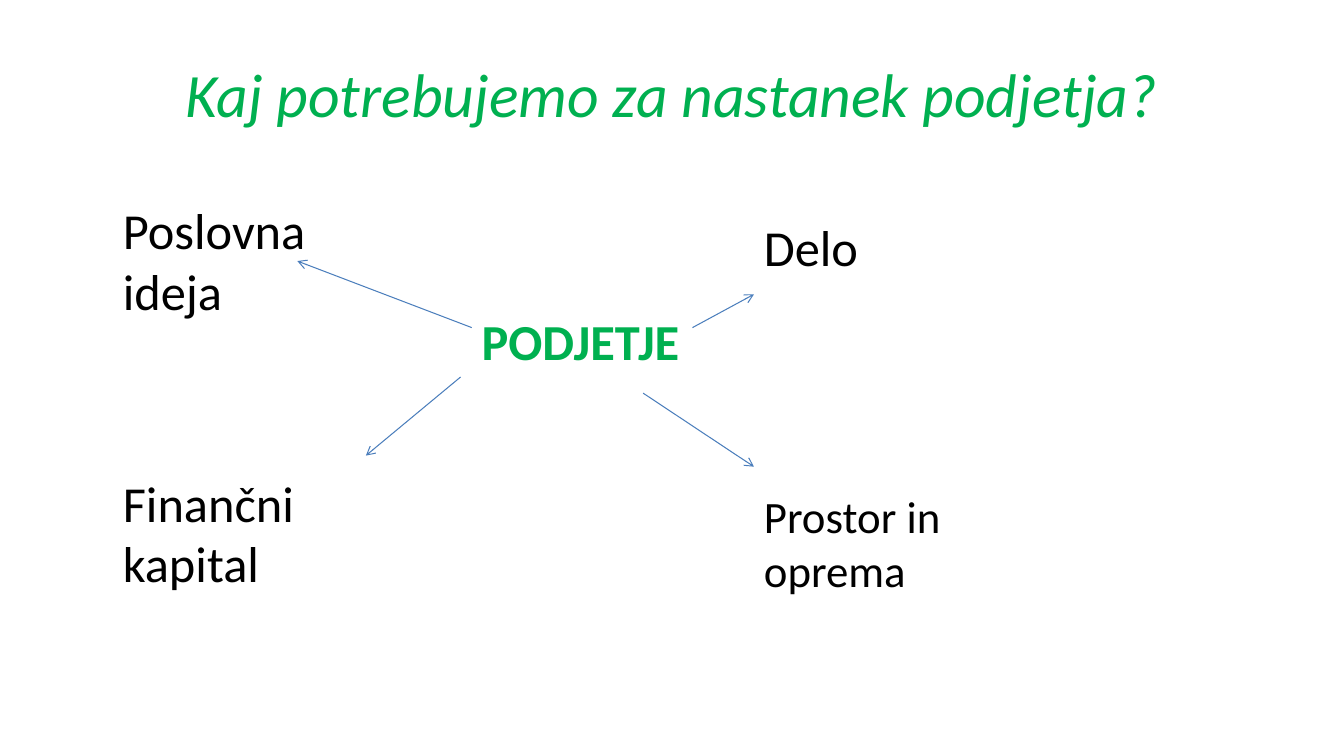
from dataclasses import dataclass

from lxml import etree
from pptx import Presentation
from pptx import util as u
from pptx.dml.color import RGBColor
from pptx.enum import shapes, text
from pptx.oxml import ns


@dataclass(frozen=True)
class Theme:
    font: str = "Calibri"
    accent: str = "00B050"
    ink: str = "000000"
    arrow: str = "4B7EBC"
    title_size: int = 44
    body_size: int = 36
    small_size: int = 32
    arrow_width: float = 0.75


class SlideBuilder:
    """Places elements on a grid of 40 columns by 30 rows."""

    COLUMNS, ROWS = 40, 30

    def __init__(self, deck, theme):
        self.theme = theme
        self.column = deck.slide_width / self.COLUMNS
        self.row = deck.slide_height / self.ROWS
        self.slide = deck.slides.add_slide(deck.slide_layouts[6])

    def place(self, column, row):
        return u.Emu(round(column * self.column)), u.Emu(round(row * self.row))

    def add_text(self, wording, position, extent, *, size=None, color=None,
                 bold=False, italic=False, align=text.PP_ALIGN.LEFT,
                 anchor=text.MSO_ANCHOR.TOP):
        box = self.slide.shapes.add_textbox(*self.place(*position), *self.place(*extent))
        frame = box.text_frame
        frame.word_wrap = True
        frame.vertical_anchor = anchor
        para = frame.paragraphs[0]
        para.alignment = align
        span = para.add_run()
        span.text = wording
        font = span.font
        font.name = self.theme.font
        font.size = u.Pt(size or self.theme.body_size)
        font.color.rgb = RGBColor.from_string(color or self.theme.ink)
        font.bold, font.italic = bold, italic

    def add_arrow(self, start, end):
        arrow = self.slide.shapes.add_connector(
            shapes.MSO_CONNECTOR.STRAIGHT, *self.place(*start), *self.place(*end))
        arrow.line.color.rgb = RGBColor.from_string(self.theme.arrow)
        arrow.line.width = u.Pt(self.theme.arrow_width)
        properties = arrow.element.spPr
        line = properties.find(ns.qn("a:ln"))
        etree.SubElement(line, ns.qn("a:tailEnd"), type="arrow")
        etree.SubElement(properties, ns.qn("a:effectLst"))


def main():
    deck = Presentation()
    deck.slide_width, deck.slide_height = u.Inches(13.33), u.Inches(7.5)
    theme = Theme()
    page = SlideBuilder(deck, theme)

    page.add_text("Kaj potrebujemo za nastanek podjetja?", (2, 1.2), (36, 5),
                  size=theme.title_size, color=theme.accent, italic=True,
                  align=text.PP_ALIGN.CENTER, anchor=text.MSO_ANCHOR.MIDDLE)
    page.add_text("PODJETJE", (14.04, 12.12), (6.54, 2.84),
                  color=theme.accent, bold=True)

    left, right, need_width = 3.36, 22.44, 7.56
    needs = [
        ("Poslovna ideja", left, 7.72, 5.24, theme.body_size),
        ("Finančni kapital", left, 18.52, 5.24, theme.body_size),
        ("Prostor in oprema", right, 19.2, 6.88, theme.small_size),
        ("Delo", right, 8.36, 4.04, theme.body_size),
    ]
    for wording, column, row, height, size in needs:
        page.add_text(wording, (column, row), (need_width, height), size=size)

    arrows = [
        ((14.04, 13), (8.85, 10.36)),
        ((20.61, 13), (right, 11.68)),
        ((19.14, 15.6), (right, 18.52)),
        ((13.71, 14.96), (10.89, 18.08)),
    ]
    for start, end in arrows:
        page.add_arrow(start, end)

    deck.save("out.pptx")


if __name__ == "__main__":
    main()
